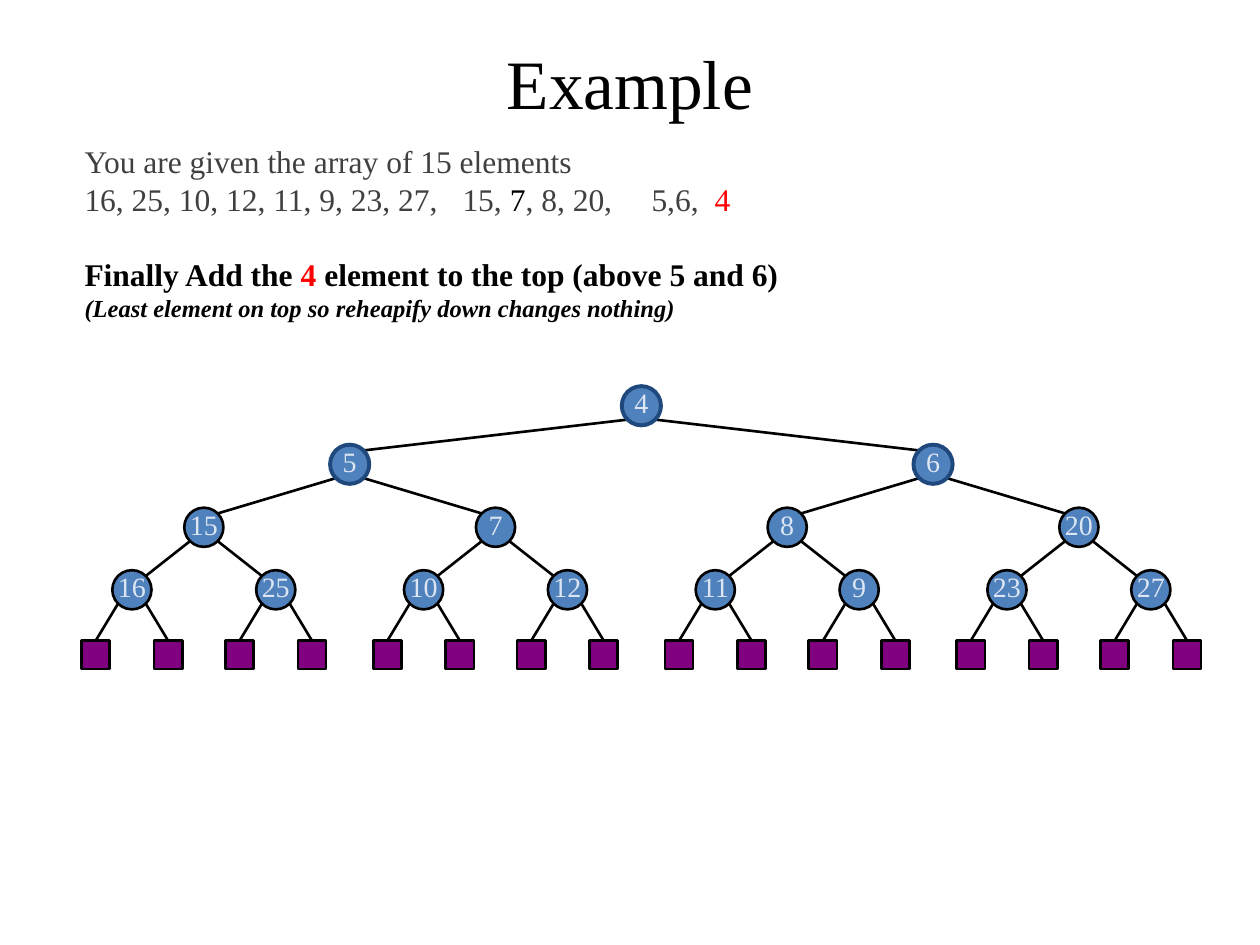
from dataclasses import dataclass
from typing import Any

from lxml import etree
from pptx import Presentation
from pptx.dml.color import RGBColor
from pptx.enum.shapes import MSO_CONNECTOR, MSO_SHAPE
from pptx.enum.text import MSO_ANCHOR, MSO_AUTO_SIZE, PP_ALIGN
from pptx.oxml.ns import qn
from pptx.util import Cm, Pt

OVAL, SQUARE = MSO_SHAPE.OVAL, MSO_SHAPE.RECTANGLE
STRAIGHT = MSO_CONNECTOR.STRAIGHT
MIDDLE, TOP = MSO_ANCHOR.MIDDLE, MSO_ANCHOR.TOP
CENTER, LEFT = PP_ALIGN.CENTER, PP_ALIGN.LEFT

BLACK, GREY, RED = "000000", "404040", "FF0000"
NAVY, BLUE, PALE, PURPLE = "1F497D", "4F81BD", "DCE6F2", "800080"

HEAP = [4, 5, 6, 15, 7, 8, 20, 16, 25, 10, 12, 11, 9, 23, 27]
ROOT_X = 12.93
LEVEL_Y = [8.18, 9.36, 10.63, 11.89, 13.2]
CHILD_OFFSET = [5.88, 2.94, 1.45, 0.73]
NODE_SIZE, LEAF_SIZE = 0.79, 0.57
RIM = 0.28  # distance from a node's centre to its diagonal rim point, per axis
TAB_STOPS = [7.9, 11.71, 13.47]

# Each paragraph: size, space before, bold, italic, spans of (text, colour)
BODY = [
    (18, 0, False, False, [("You are given the array of 15 elements", GREY)]),
    (18, 0, False, False, [
        ("16, 25, 10, 12, 11, 9, 23, 27,\t15, ", GREY), ("7", BLACK),
        (", 8, 20,\t5,6,\t", GREY), ("4", RED)]),
    (18, 21.5, True, False, [
        ("Finally Add the ", BLACK), ("4", RED),
        (" element to the top (above 5 and 6)", BLACK)]),
    (14, 0, True, True, [
        ("(Least element on top so reheapify down changes nothing)", BLACK)]),
]


def rgb(code):
    return RGBColor.from_string(code)


@dataclass
class HeapSlide:
    slide: Any
    font: str = "Times New Roman"
    line_width: float = 1.5

    def span(self, para, text, size, color, bold=False, italic=False):
        span = para.add_run()
        span.text = text
        span.font.name = self.font
        span.font.size = Pt(size)
        span.font.bold = bold
        span.font.italic = italic
        span.font.color.rgb = rgb(color)

    def place(self, box, left, top, width, height, anchor):
        box.left, box.top = Cm(left), Cm(top)
        box.width, box.height = Cm(width), Cm(height)
        box.text_frame.auto_size = MSO_AUTO_SIZE.NONE
        box.text_frame.vertical_anchor = anchor

    def title(self, text):
        box = self.slide.shapes.title
        self.place(box, 1.27, 0.76, 22.86, 1.78, MIDDLE)
        para = box.text_frame.paragraphs[0]
        para.alignment = CENTER
        self.span(para, text, 39.6, BLACK)

    def body(self, paragraphs):
        box = self.slide.placeholders[1]
        self.place(box, 1.45, 2.74, 14.96, 3.94, TOP)
        frame = box.text_frame
        frame.word_wrap = False
        for index, (size, before, bold, italic, spans) in enumerate(paragraphs):
            para = frame.add_paragraph() if index else frame.paragraphs[0]
            para.alignment = LEFT
            para.space_before = Pt(before)
            self.plain_paragraph(para)
            for text, color in spans:
                self.span(para, text, size, color, bold, italic)

    def plain_paragraph(self, para):
        """Remove bullet and indent, and set the tab stops."""
        props = para._p.get_or_add_pPr()
        props.set("marL", "0")
        props.set("indent", "0")
        etree.SubElement(props, qn("a:buNone"))
        tabs = etree.SubElement(props, qn("a:tabLst"))
        for stop in TAB_STOPS:
            etree.SubElement(tabs, qn("a:tab"), pos=str(Cm(stop)), algn="l")

    def shape(self, kind, x, y, size, fill, outline, width):
        """Add a shape centred on x, y."""
        shape = self.slide.shapes.add_shape(
            kind, Cm(x - size / 2), Cm(y - size / 2), Cm(size), Cm(size))
        shape.shadow.inherit = False
        shape.fill.solid()
        shape.fill.fore_color.rgb = rgb(fill)
        shape.line.color.rgb = rgb(outline)
        shape.line.width = Pt(width)
        return shape

    def leaf(self, x, y):
        self.shape(SQUARE, x, y, LEAF_SIZE, PURPLE, BLACK, self.line_width)

    def node(self, x, y, value, is_upper):
        outline, width = (NAVY, 2.25) if is_upper else (BLACK, self.line_width)
        shape = self.shape(OVAL, x, y, NODE_SIZE, BLUE, outline, width)
        frame = shape.text_frame
        frame.word_wrap = False
        frame.vertical_anchor = MIDDLE
        frame.margin_left = frame.margin_right = frame.margin_top = 0
        frame.margin_bottom = Cm(0.13)
        para = frame.paragraphs[0]
        para.alignment = CENTER
        self.span(para, str(value), 16, PALE)

    def edge(self, x1, y1, x2, y2):
        line = self.slide.shapes.add_connector(
            STRAIGHT, Cm(x1), Cm(y1), Cm(x2), Cm(y2))
        line.line.color.rgb = rgb(BLACK)
        line.line.width = Pt(self.line_width)
        etree.SubElement(line._element.spPr, qn("a:effectLst"))

    def tree(self, index=0, level=0, x=ROOT_X):
        """Draw the subtree at a heap index, children before their parent."""
        y = LEVEL_Y[level]
        if index >= len(HEAP):
            self.leaf(x, y)
            return
        child_y = LEVEL_Y[level + 1]
        for child, side in ((2 * index + 1, -1), (2 * index + 2, 1)):
            child_x = x + side * CHILD_OFFSET[level]
            if child < len(HEAP):
                end_x, end_y = child_x - side * RIM, child_y - RIM
            else:
                end_x, end_y = child_x, child_y - LEAF_SIZE / 2
            self.edge(x + side * RIM, y + RIM, end_x, end_y)
            self.tree(child, level + 1, child_x)
        self.node(x, y, HEAP[index], level < 2)


def main():
    deck = Presentation()
    deck.slide_width, deck.slide_height = Cm(25.4), Cm(19.05)
    page = HeapSlide(deck.slides.add_slide(deck.slide_layouts[1]))
    page.title("Example")
    page.body(BODY)
    page.tree()
    deck.save("out.pptx")


if __name__ == "__main__":
    main()
